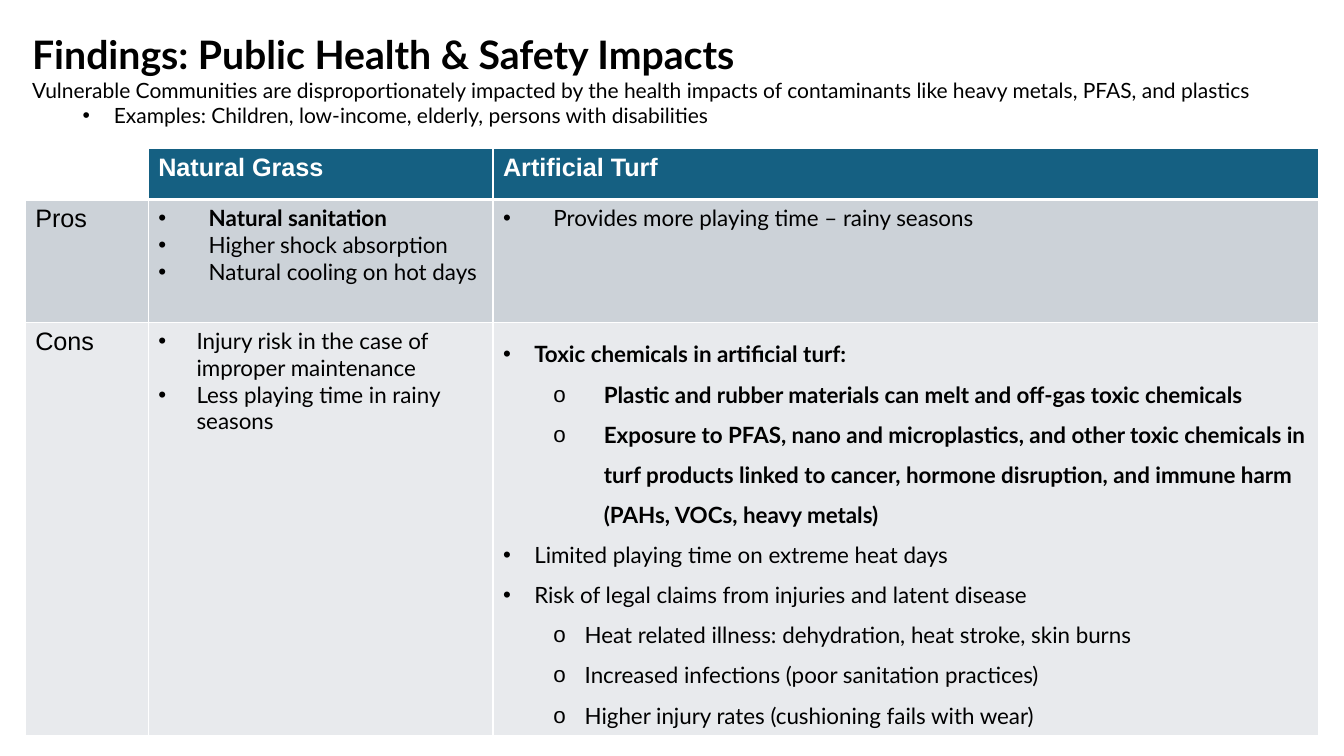
"""Build the findings slide comparing natural grass with artificial turf."""
from lxml.etree import SubElement
from pptx import Presentation
from pptx.dml.color import RGBColor
from pptx.enum.text import MSO_ANCHOR
from pptx.oxml.ns import qn
from pptx.util import Inches, Pt

COLORS = {"text": "000000", "white": "FFFFFF", "header": "156082",
          "pros": "CCD2D8", "cons": "E8EAED"}


def write(frame, lines, **shared):
    for index, (text, special) in enumerate(lines):
        style = {**shared, **special}
        paragraph = frame.paragraphs[0] if index == 0 else frame.add_paragraph()
        paragraph.level = style.get("level", 0)
        if "spacing" in style:
            paragraph.line_spacing = style["spacing"]
        if "bullet" in style:
            left, hanging = style["indent"]
            props = paragraph._p.get_or_add_pPr()
            props.set("marL", str(Inches(left)))
            props.set("indent", str(-Inches(hanging)))
            SubElement(props, qn("a:buFont")).set("typeface", "Arial")
            SubElement(props, qn("a:buChar")).set("char", style["bullet"])
        run = paragraph.add_run()
        run.text = text
        run.font.name = style.get("font", "Lato")
        run.font.size = Pt(style.get("size", 16))
        run.font.bold = style.get("bold", False)
        run.font.color.rgb = RGBColor.from_string(COLORS[style.get("color", "text")])


class FindingsSlide:
    def __init__(self, slide):
        self.slide = slide

    def text(self, left, top, width, height, lines):
        box = self.slide.shapes.add_textbox(*map(Inches, (left, top, width, height)))
        box.text_frame.word_wrap = True
        write(box.text_frame, lines)

    def border(self, cell, side, points):
        line = SubElement(cell._tc.get_or_add_tcPr(), qn(f"a:ln{side}"), w=str(Pt(points)))
        fill = SubElement(line, qn("a:solidFill"))
        SubElement(fill, qn("a:srgbClr")).set("val", COLORS["white"])

    def cell(self, cell, row, fill, lines, style):
        for side in "LRTB":
            thick = (row, side) in ((0, "B"), (1, "T"))
            self.border(cell, side, 3 if thick else 1)
        if fill:
            cell.fill.solid()
            cell.fill.fore_color.rgb = RGBColor.from_string(COLORS[fill])
        else:
            cell.fill.background()
        cell.vertical_anchor = MSO_ANCHOR.TOP
        write(cell.text_frame, lines, **style)

    def table(self, left, top, widths, heights, rows):
        table = self.slide.shapes.add_table(
            len(heights), len(widths), Inches(left), Inches(top),
            Inches(sum(widths)), Inches(sum(heights))).table
        table.first_row = table.horz_banding = False
        for column, width in zip(table.columns, widths):
            column.width = Inches(width)
        for row, (height, (fill, cells)) in enumerate(zip(heights, rows)):
            table.rows[row].height = Inches(height)
            for column, (lines, style) in enumerate(cells):
                self.cell(table.cell(row, column), row, fill if lines else None,
                          lines, style)


def main():
    deck = Presentation()
    deck.slide_width, deck.slide_height = Inches(13.33), Inches(7.5)
    findings = FindingsSlide(deck.slides.add_slide(deck.slide_layouts[6]))

    findings.text(0.22, 0.25, 12.89, 1.08, [
        ("Findings: Public Health & Safety Impacts", {"size": 28, "bold": True}),
        ("Vulnerable Communities are disproportionately impacted by the health impacts "
         "of contaminants like heavy metals, PFAS, and plastics", {"size": 15}),
        ("Examples: Children, low-income, elderly, persons with disabilities",
         {"size": 15, "level": 1, "bullet": "•", "indent": (0.81, 0.31)}),
    ])

    label = {"font": "Arial", "size": 18}
    heading = {**label, "bold": True, "color": "white"}
    pro = {"bullet": "•", "indent": (0.5, 0.5)}
    grass_con = {"bullet": "•", "indent": (0.38, 0.38)}
    turf_con = {"bullet": "•", "indent": (0.31, 0.31), "spacing": 1.5}
    detail = {"level": 1, "bullet": "o", "indent": (0.81, 0.31)}
    toxin = {**detail, "indent": (1, 0.5), "bold": True}

    grass_pros = [("Natural sanitation", {"bold": True}),
                  ("Higher shock absorption", {}),
                  ("Natural cooling on hot days", {})]
    turf_pros = [("Provides more playing time – rainy seasons", {})]
    grass_cons = [("Injury risk in the case of improper maintenance", {}),
                  ("Less playing time in rainy seasons", {})]
    turf_cons = [
        ("Toxic chemicals in artificial turf:", {"bold": True}),
        ("Plastic and rubber materials can melt and off-gas toxic chemicals", toxin),
        ("Exposure to PFAS, nano and microplastics, and other toxic chemicals in turf "
         "products linked to cancer, hormone disruption, and immune harm "
         "(PAHs, VOCs, heavy metals)", toxin),
        ("Limited playing time on extreme heat days", {}),
        ("Risk of legal claims from injuries and latent disease", {}),
        ("Heat related illness: dehydration, heat stroke, skin burns", detail),
        ("Increased infections (poor sanitation practices)", detail),
        ("Higher injury rates (cushioning fails with wear)", detail),
    ]
    findings.table(0.25, 1.47, (1.22, 3.42, 8.19), (0.51, 1.22, 3.83), [
        ("header", [([], {}), ([("Natural Grass", {})], heading),
                    ([("Artificial Turf", {})], heading)]),
        ("pros", [([("Pros", {})], label), (grass_pros, pro), (turf_pros, pro)]),
        ("cons", [([("Cons", {})], label), (grass_cons, grass_con), (turf_cons, turf_con)]),
    ])
    deck.save("out.pptx")


if __name__ == "__main__":
    main()
